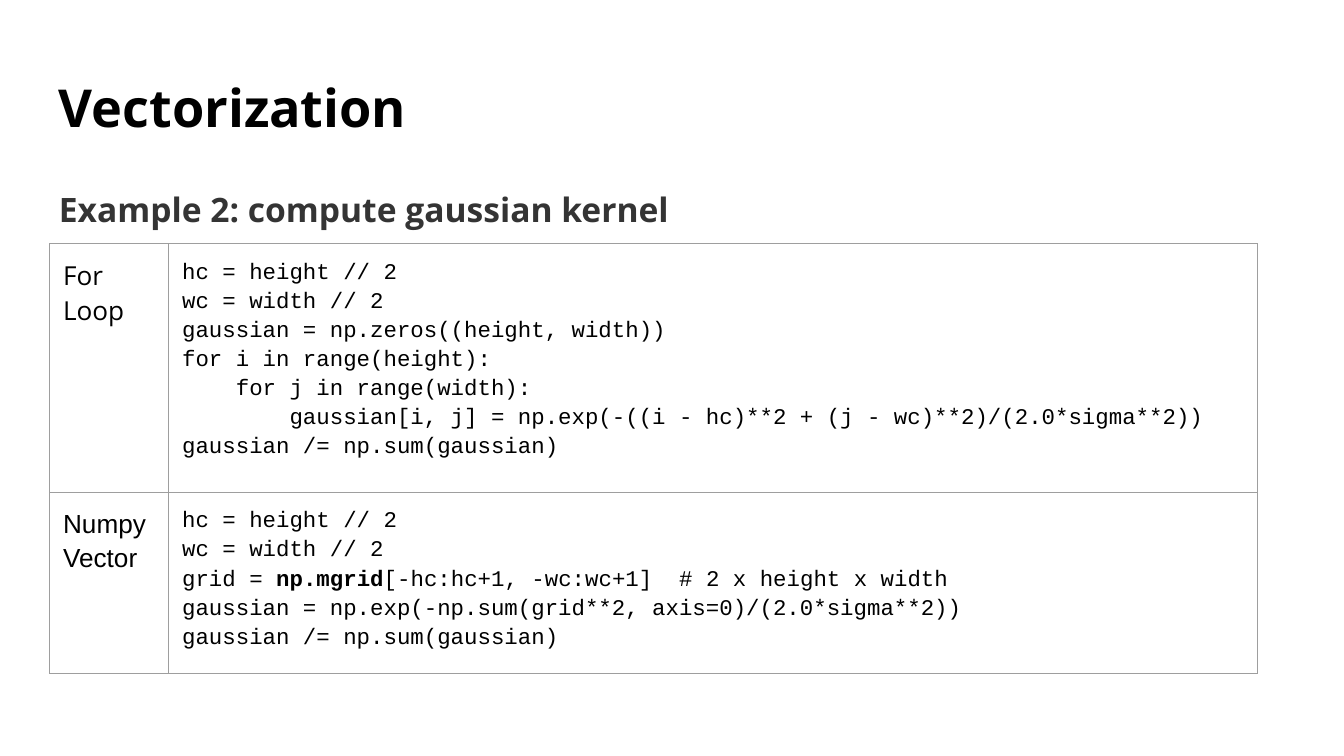
from lxml import etree
from pptx import Presentation
from pptx import util as u
from pptx.dml.color import RGBColor
from pptx.enum import text
from pptx.oxml import ns

BLACK = RGBColor(0x00, 0x00, 0x00)
DARK_GREY = RGBColor(0x34, 0x34, 0x34)
BORDER_GREY = RGBColor(0x9E, 0x9E, 0x9E)
INSET = u.Pt(7.2)

LOOP_CODE = """hc = height // 2
wc = width // 2
gaussian = np.zeros((height, width))
for i in range(height):
    for j in range(width):
        gaussian[i, j] = np.exp(-((i - hc)**2 + (j - wc)**2)/(2.0*sigma**2))
gaussian /= np.sum(gaussian)"""
VECTOR_SETUP = """hc = height // 2
wc = width // 2
grid = """
VECTOR_REST = """[-hc:hc+1, -wc:wc+1]  # 2 x height x width
gaussian = np.exp(-np.sum(grid**2, axis=0)/(2.0*sigma**2))
gaussian /= np.sum(gaussian)"""


def add_span(para, words, font, size, color=BLACK, bold=False):
    """Add styled text, turning each newline into a line break."""
    for number, line in enumerate(words.split("\n")):
        if number:
            para.add_line_break()
        span = para.add_run()
        span.text = line
        span.font.name = font
        span.font.size = u.Pt(size)
        span.font.color.rgb = color
        span.font.bold = bold


def add_borders(cell):
    properties = cell._tc.get_or_add_tcPr()
    for position, side in enumerate(("lnL", "lnR", "lnT", "lnB")):
        line = etree.Element(ns.qn(f"a:{side}"), w=str(u.Pt(0.75)))
        fill = etree.SubElement(line, ns.qn("a:solidFill"))
        etree.SubElement(fill, ns.qn("a:srgbClr"), val=str(BORDER_GREY))
        properties.insert(position, line)


deck = Presentation()
deck.slide_width = u.Pt(720)
deck.slide_height = u.Pt(405)
page = deck.slides.add_slide(deck.slide_layouts[6])

# Headings: wording, top, height, top inset, size, colour, line spacing
headings = [
    ("Vectorization", 35.3, 45.4, 5, 28, BLACK, 1.0),
    ("Example 2: compute gaussian kernel", 90.7, 269.3, 7.2, 18, DARK_GREY, 1.15),
]
for words, top, height, inset, size, color, spacing in headings:
    box = page.shapes.add_textbox(u.Pt(24.5), u.Pt(top), u.Pt(671), u.Pt(height))
    frame = box.text_frame
    frame.word_wrap = True
    frame.vertical_anchor = text.MSO_ANCHOR.TOP
    frame.margin_left = frame.margin_right = frame.margin_bottom = INSET
    frame.margin_top = u.Pt(inset)
    para = frame.paragraphs[0]
    para.line_spacing = spacing
    add_span(para, words, "Open Sans", size, color, bold=True)

# Comparison table
table = page.shapes.add_table(
    2, 2, u.Pt(26.6), u.Pt(130.5), u.Pt(647.3), u.Pt(225)
).table
table.first_row = False
table.horz_banding = False
for column, width in zip(table.columns, (63.8, 583.5)):
    column.width = u.Pt(width)
for row, height in zip(table.rows, (133.2, 92)):
    row.height = u.Pt(height)
for cell in table.iter_cells():
    cell.margin_left = cell.margin_right = INSET
    cell.margin_top = cell.margin_bottom = INSET
    cell.fill.background()
    add_borders(cell)

loop_label = table.cell(0, 0).text_frame
add_span(loop_label.paragraphs[0], "For", "Open Sans", 14)
add_span(loop_label.add_paragraph(), "Loop", "Open Sans", 14)

vector_label = table.cell(1, 0).text_frame.paragraphs[0]
vector_label.line_spacing = 1.15
add_span(vector_label, "Numpy Vector", "Arial", 14)

code_rows = [
    [(LOOP_CODE, False)],
    [(VECTOR_SETUP, False), ("np.mgrid", True), (VECTOR_REST, False)],
]
for row, parts in enumerate(code_rows):
    para = table.cell(row, 1).text_frame.paragraphs[0]
    para.line_spacing = 1.15
    para.space_after = u.Pt(15)
    for words, bold in parts:
        add_span(para, words, "Courier New", 12, bold=bold)

deck.save("out.pptx")
